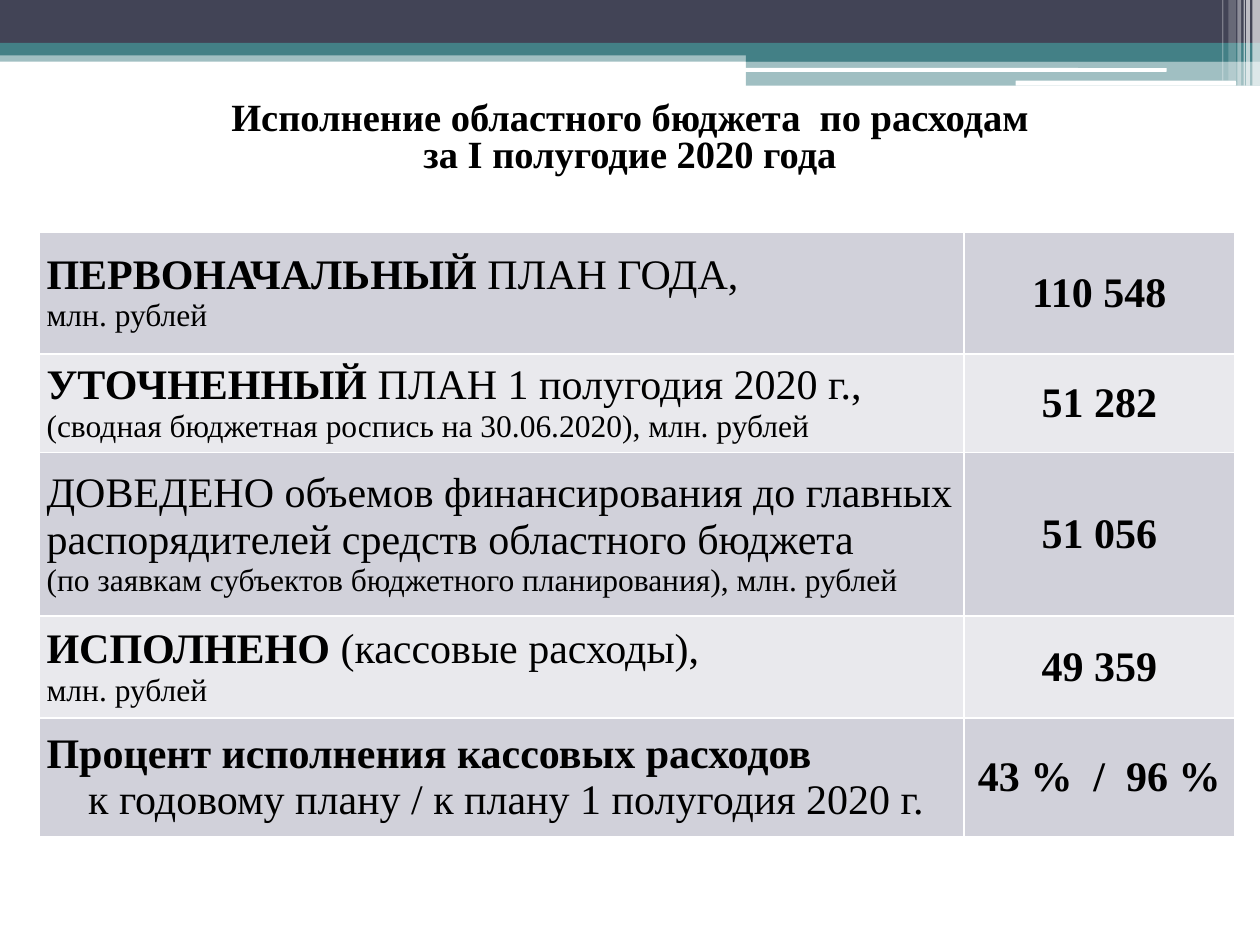
from typing import NamedTuple

from lxml.etree import SubElement
from pptx import Presentation
from pptx.dml.color import RGBColor
from pptx.enum.shapes import MSO_SHAPE
from pptx.enum.text import MSO_ANCHOR, PP_ALIGN
from pptx.oxml.ns import qn
from pptx.util import Pt

EMU_PER_PX = 9144
FONT = "Times New Roman"
BLACK, WHITE, NAVY, TEAL = "000000", "FFFFFF", "424456", "438086"
ROW_FILLS = ("D1D1DA", "E9E9ED")
COLUMN_WIDTHS = (734, 215)


class Bar(NamedTuple):
    left: int
    top: int
    width: int
    height: int
    color: str
    opacity: int = 100
    rounded: bool = False


class Line(NamedTuple):
    bold: str = ""
    plain: str = ""
    size: int = 24
    indent: int = 0


class BudgetRow(NamedTuple):
    height: int
    lines: tuple[Line, ...]
    value: str


BARS = (
    Bar(0, 40, 1000, 9, TEAL, 50),
    Bar(0, 0, 1000, 34, NAVY),
    Bar(0, 34, 1000, 10, TEAL),
    Bar(592, 39, 408, 10, TEAL),
    Bar(592, 48, 408, 20, TEAL, 50),
    Bar(591, 54, 335, 3, WHITE, rounded=True),
    Bar(806, 64, 175, 4, WHITE, rounded=True),
    Bar(994, 0, 6, 68, WHITE, 65),
    Bar(989, 0, 3, 68, WHITE, 65),
    Bar(987, 0, 1, 68, WHITE, 60),
    Bar(982, 0, 3, 68, WHITE, 40),
    Bar(975, 0, 6, 64, WHITE, 20),
    Bar(970, 0, 1, 64, WHITE, 30),
)

TITLE_LINES = (
    "Исполнение областного бюджета  по расходам",
    "за I полугодие 2020 года",
)

BUDGET_ROWS = (
    BudgetRow(97, (
        Line("ПЕРВОНАЧАЛЬНЫЙ", " ПЛАН ГОДА,"),
        Line(plain="млн. рублей", size=18),
    ), "110 548"),
    BudgetRow(78, (
        Line("УТОЧНЕННЫЙ", " ПЛАН 1 полугодия 2020 г.,"),
        Line(plain="(сводная бюджетная роспись на 30.06.2020), млн. рублей", size=18),
    ), "51 282"),
    BudgetRow(130, (
        Line(plain="ДОВЕДЕНО объемов финансирования до главных "
                   "распорядителей средств областного бюджета"),
        Line(plain="(по заявкам субъектов бюджетного планирования), млн. рублей", size=18),
    ), "51 056"),
    BudgetRow(81, (
        Line("ИСПОЛНЕНО", " (кассовые расходы),"),
        Line(plain="млн. рублей", size=18),
    ), "49 359"),
    BudgetRow(94, (
        Line("Процент исполнения кассовых расходов"),
        Line(plain="к годовому плану / к плану 1 полугодия 2020 г.", indent=33),
    ), "43 %  /  96 %"),
)


def px(length: int) -> int:
    return length * EMU_PER_PX


def rgb(color: str) -> RGBColor:
    return RGBColor.from_string(color)


def draw_bar(slide, bar: Bar) -> None:
    kind = MSO_SHAPE.ROUNDED_RECTANGLE if bar.rounded else MSO_SHAPE.RECTANGLE
    shape = slide.shapes.add_shape(
        kind, px(bar.left), px(bar.top), px(bar.width), px(bar.height))
    shape.shadow.inherit = False
    shape.line.fill.background()
    shape.fill.solid()
    shape.fill.fore_color.rgb = rgb(bar.color)
    if bar.opacity < 100:
        color = shape.fill._xPr.find(qn("a:solidFill"))[0]
        SubElement(color, qn("a:alpha"), val=str(bar.opacity * 1000))


def style_paragraph(paragraph, size: int, alignment: PP_ALIGN) -> None:
    paragraph.alignment = alignment
    paragraph.font.name = FONT
    paragraph.font.size = Pt(size)
    paragraph.font.color.rgb = rgb(BLACK)


def write_line(paragraph, line: Line, alignment: PP_ALIGN = PP_ALIGN.LEFT) -> None:
    style_paragraph(paragraph, line.size, alignment)
    if line.indent:
        paragraph._p.get_or_add_pPr().set("marL", str(px(line.indent)))
    for text, bold in ((line.bold, True), (line.plain, False)):
        if text:
            run = paragraph.add_run()
            run.text = text
            run.font.bold = bold


def draw_title(slide) -> None:
    frame = slide.shapes.add_textbox(0, px(73), px(1000), px(68)).text_frame
    frame.word_wrap = True
    frame.vertical_anchor = MSO_ANCHOR.BOTTOM
    frame.margin_left = frame.margin_right = px(6)
    frame.margin_top = frame.margin_bottom = px(1)
    for index, text in enumerate(TITLE_LINES):
        paragraph = frame.add_paragraph() if index else frame.paragraphs[0]
        write_line(paragraph, Line(bold=text, size=22), PP_ALIGN.CENTER)
        paragraph.line_spacing = Pt(21)


def fill_cell(cell, lines: tuple[Line, ...], color: str, alignment: PP_ALIGN) -> None:
    cell.fill.solid()
    cell.fill.fore_color.rgb = rgb(color)
    cell.vertical_anchor = MSO_ANCHOR.MIDDLE
    cell.margin_left = cell.margin_right = px(6)
    cell.margin_top = cell.margin_bottom = 0
    frame = cell.text_frame
    for index, line in enumerate(lines):
        paragraph = frame.add_paragraph() if index else frame.paragraphs[0]
        write_line(paragraph, line, alignment)


def draw_budget_table(slide) -> None:
    height = sum(row.height for row in BUDGET_ROWS)
    table = slide.shapes.add_table(
        len(BUDGET_ROWS), len(COLUMN_WIDTHS),
        px(31), px(184), px(sum(COLUMN_WIDTHS)), px(height)).table
    table.first_row = table.horz_banding = False
    for column, width in zip(table.columns, COLUMN_WIDTHS):
        column.width = px(width)
    for index, row in enumerate(BUDGET_ROWS):
        table.rows[index].height = px(row.height)
        color = ROW_FILLS[index % 2]
        fill_cell(table.cell(index, 0), row.lines, color, PP_ALIGN.LEFT)
        fill_cell(table.cell(index, 1), (Line(row.value),), color, PP_ALIGN.CENTER)


def main() -> None:
    """Build the budget execution slide and save it."""
    presentation = Presentation()
    presentation.slide_width, presentation.slide_height = px(1000), px(750)
    slide = presentation.slides.add_slide(presentation.slide_layouts[6])
    for bar in BARS:
        draw_bar(slide, bar)
    draw_title(slide)
    draw_budget_table(slide)
    presentation.save("out.pptx")


if __name__ == "__main__":
    main()
